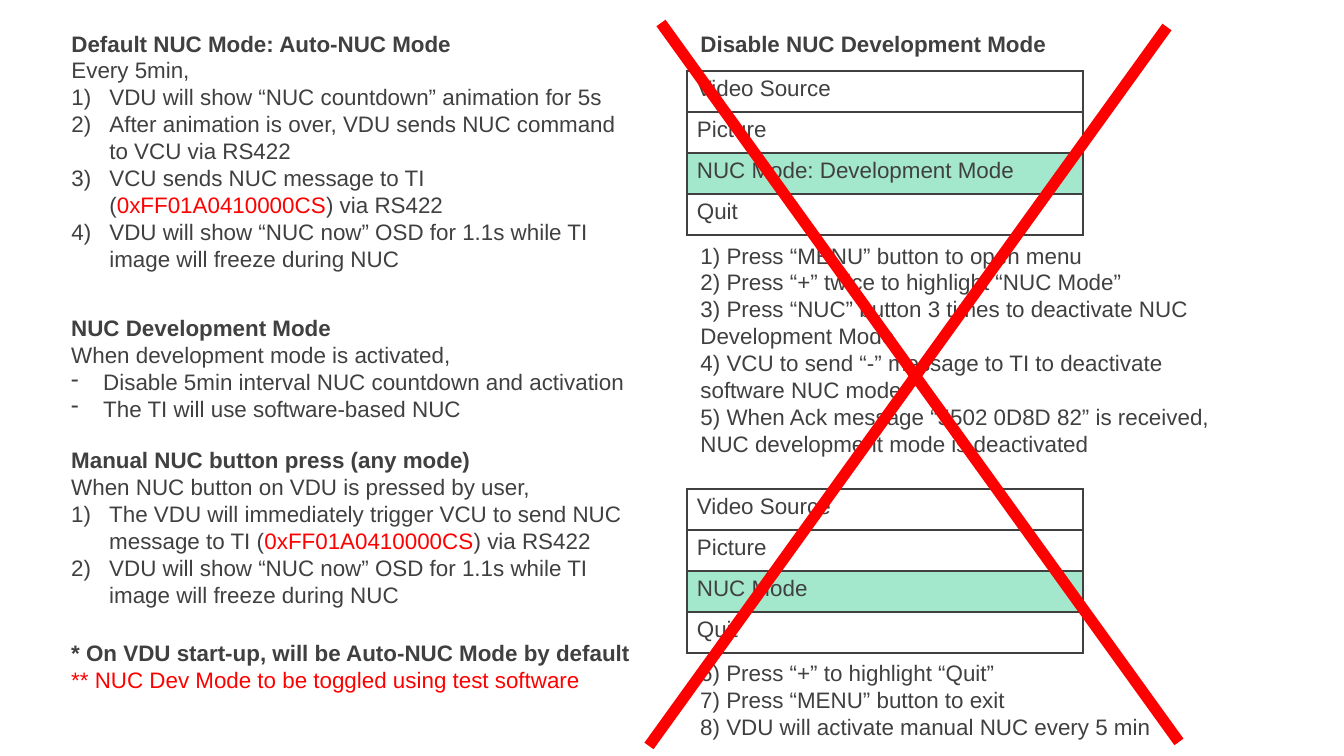
from lxml import etree
from pptx import Presentation
from pptx.dml.color import RGBColor
from pptx.enum.shapes import MSO_CONNECTOR
from pptx.enum.text import MSO_ANCHOR, MSO_AUTO_SIZE, PP_ALIGN
from pptx.oxml import parse_xml
from pptx.oxml.ns import nsdecls, qn
from pptx.util import Pt

STRAIGHT = MSO_CONNECTOR.STRAIGHT
TOP = MSO_ANCHOR.TOP
NO_FIT = MSO_AUTO_SIZE.NONE
LEFT = PP_ALIGN.LEFT

PX = 914400 / 134.4
GREY, RED, GREEN = "404040", "FF0000", "A3E7CD"
PARA = {"alignment": LEFT, "space_before": Pt(0), "space_after": Pt(0), "line_spacing": 1.0}
FONT = {"name": "Arial", "size": Pt(12)}
FRAME = {"word_wrap": True, "auto_size": NO_FIT, "vertical_anchor": TOP}

# Paragraph kind: hanging indent in px and bullet element
BULLETS = {
    "head": (0, "<a:buNone %s/>"),
    "text": (0, "<a:buNone %s/>"),
    "num": (38, '<a:buAutoNum %s type="arabicParenR"/>'),
    "dash": (32, '<a:buChar %s char="-"/>'),
}


def emu(*px):
    return [round(v * PX) for v in px]


def write(tf, paragraphs):
    """Fill a text frame from (kind, text) pairs; text between bars is red."""
    for i, (kind, text) in enumerate(paragraphs):
        p = tf.paragraphs[0] if i == 0 else tf.add_paragraph()
        indent, bullet = BULLETS[kind]
        pPr = p._p.get_or_add_pPr()
        pPr.set("marL", str(emu(indent)[0]))
        pPr.set("indent", str(-emu(indent)[0]))
        pPr.append(parse_xml(bullet % nsdecls("a")))
        for name, value in PARA.items():
            setattr(p, name, value)
        for j, part in enumerate(text.split("|")):
            if part:
                r = p.add_run()
                r.text = part
                for name, value in FONT.items():
                    setattr(r.font, name, value)
                r.font.bold = kind == "head"
                r.font.color.rgb = RGBColor.from_string(RED if j % 2 else GREY)


prs = Presentation()
prs.slide_width, prs.slide_height = emu(1344, 756)
s = prs.slides.add_slide(prs.slide_layouts[3])
title, auto_list, disable_list = s.placeholders

# Menu tables, with the NUC row highlighted
for top, nuc_label in ((71, "NUC Mode: Development Mode"), (489, "NUC Mode")):
    menu = ["Video Source", "Picture", nuc_label, "Quit"]
    table = s.shapes.add_table(len(menu), 1, *emu(687, top, 396, 41 * len(menu))).table
    table.first_row = table.horz_banding = False
    for row, label in enumerate(menu):
        cell = table.cell(row, 0)
        cell.margin_left, cell.margin_right, cell.margin_top, cell.margin_bottom = emu(10, 10, 5, 5)
        write(cell.text_frame, [("text", label)])
        tcPr = cell._tc.get_or_add_tcPr()
        for side in ("lnL", "lnR", "lnT", "lnB"):
            tcPr.append(parse_xml(
                f'<a:{side} {nsdecls("a")} w="{Pt(1)}"><a:solidFill>'
                f'<a:srgbClr val="{GREY}"/></a:solidFill></a:{side}>'))
        if label == nuc_label:
            cell.fill.solid()
            cell.fill.fore_color.rgb = RGBColor.from_string(GREEN)
        else:
            cell.fill.background()

# Text blocks: placeholder or None for a text box, position, paragraphs
blocks = [
    (auto_list, (58, 23, 593, 258), [
        ("head", "Default NUC Mode: Auto-NUC Mode"),
        ("text", "Every 5min,"),
        ("num", "VDU will show “NUC countdown” animation for 5s"),
        ("num", "After animation is over, VDU sends NUC command to VCU via RS422"),
        ("num", "VCU sends NUC message to TI (|0xFF01A0410000CS|) via RS422"),
        ("num", "VDU will show “NUC now” OSD for 1.1s while TI image will freeze during NUC"),
    ]),
    (None, (58, 308, 593, 122), [
        ("head", "NUC Development Mode"),
        ("text", "When development mode is activated,"),
        ("dash", "Disable 5min interval NUC countdown and activation"),
        ("dash", "The TI will use software-based NUC"),
    ]),
    (None, (58, 440, 593, 176), [
        ("head", "Manual NUC button press (any mode)"),
        ("text", "When NUC button on VDU is pressed by user,"),
        ("num", "The VDU will immediately trigger VCU to send NUC message to TI "
                "(|0xFF01A0410000CS|) via RS422"),
        ("num", "VDU will show “NUC now” OSD for 1.1s while TI image will freeze during NUC"),
    ]),
    (None, (58, 633, 593, 67), [
        ("head", "* On VDU start-up, will be Auto-NUC Mode by default"),
        ("text", "|** NUC Dev Mode to be toggled using test software"),
    ]),
    (title, (687, 23, 396, 41), [("head", "Disable NUC Development Mode")]),
    (disable_list, (687, 235, 579, 231), [
        ("text", "1) Press “MENU” button to open menu"),
        ("text", "2) Press “+” twice to highlight “NUC Mode”"),
        ("text", "3) Press “NUC” button 3 times to deactivate NUC Development Mode"),
        ("text", "4) VCU to send “-” message to TI to deactivate software NUC mode"),
        ("text", "5) When Ack message “5502 0D8D 82” is received, "
                 "NUC development mode is deactivated"),
    ]),
    (None, (687, 653, 598, 95), [
        ("text", "6) Press “+” to highlight “Quit”"),
        ("text", "7) Press “MENU” button to exit"),
        ("text", "8) VDU will activate manual NUC every 5 min"),
    ]),
]
for sp, box, paragraphs in blocks:
    if sp is None:
        sp = s.shapes.add_textbox(*emu(*box))
    else:
        sp.left, sp.top, sp.width, sp.height = emu(*box)
    tf = sp.text_frame
    for name, value in FRAME.items():
        setattr(tf, name, value)
    write(tf, paragraphs)

# Red cross over the disabled procedure
for ends in ((661, 23, 1179, 742), (1167, 27, 649, 746)):
    line = s.shapes.add_connector(STRAIGHT, *emu(*ends))
    line.line.color.rgb = RGBColor.from_string(RED)
    line.line.width = Pt(6)
    etree.SubElement(line._element.spPr, qn("a:effectLst"))

prs.save("out.pptx")
